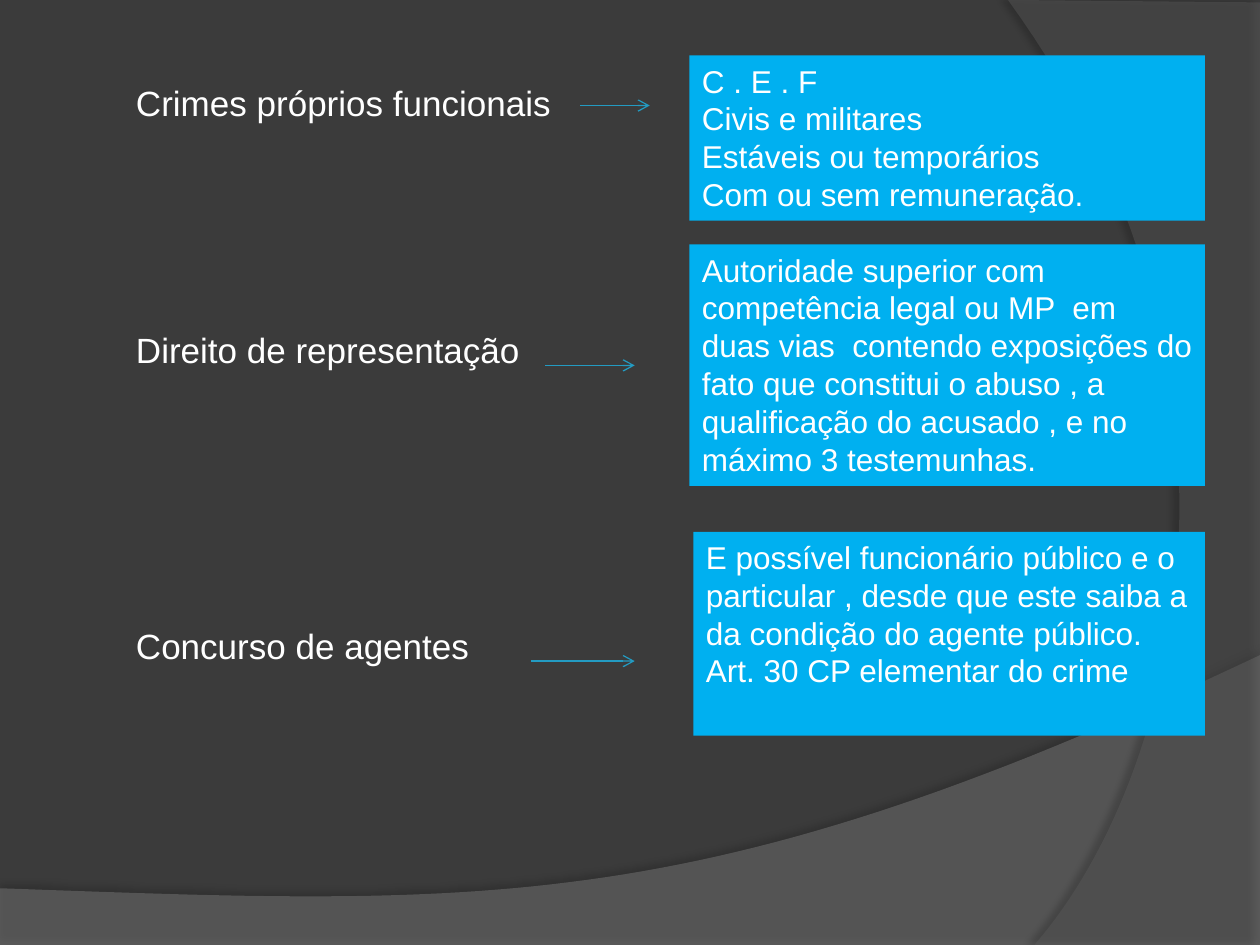
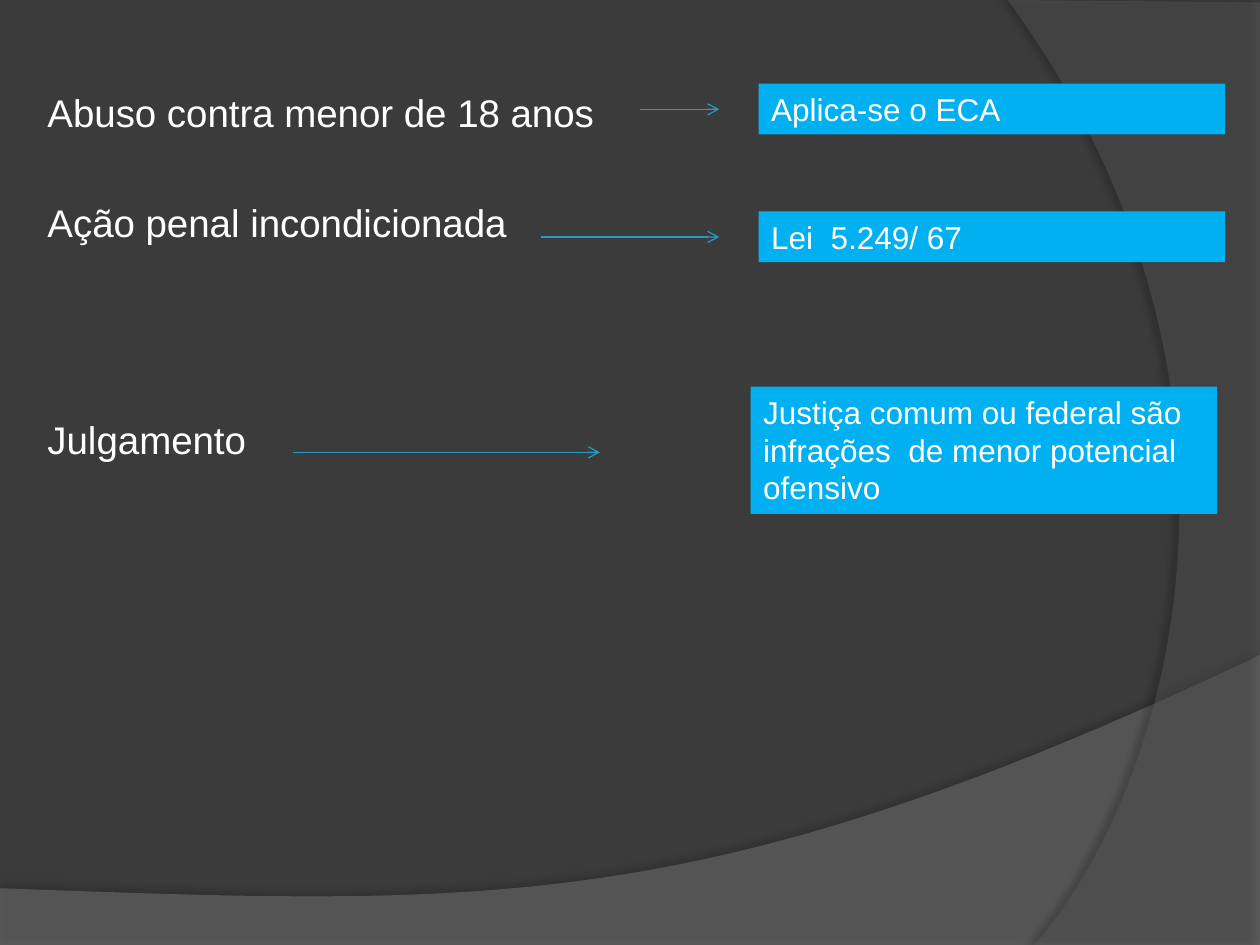
from lxml import etree
from pptx import Presentation
from pptx.dml.color import RGBColor
from pptx.enum.shapes import MSO_CONNECTOR, MSO_SHAPE
from pptx.enum.text import MSO_ANCHOR, PP_ALIGN
from pptx.oxml.ns import qn
from pptx.util import Pt

RECTANGLE = MSO_SHAPE.RECTANGLE
STRAIGHT = MSO_CONNECTOR.STRAIGHT
TOP = MSO_ANCHOR.TOP
LEFT = PP_ALIGN.LEFT

WIDTH, HEIGHT = 720, 540
FONT = "Arial"
COLORS = {
    "background": "3B3B3B",
    "wave": "7F7F7F",
    "arc": "5E5E5E",
    "answer": "00B0F0",
    "arrow": "239BC2",
    "text": "FFFFFF",
    "shadow": "000000",
}
LINE_PITCH = 1.4
LINE_HEIGHT = 1.15
CURVE_STEPS = 60


def color(name):
    return RGBColor.from_string(COLORS[name])


def curve(start, control_1, control_2, end):
    points = []
    for step in range(CURVE_STEPS + 1):
        t = step / CURVE_STEPS
        weights = ((1 - t) ** 3, 3 * t * (1 - t) ** 2, 3 * t * t * (1 - t), t ** 3)
        corners = (start, control_1, control_2, end)
        points.append(tuple(
            sum(weight * corner[axis] for weight, corner in zip(weights, corners))
            for axis in (0, 1)
        ))
    return points


WAVE = [(0, HEIGHT), (WIDTH, HEIGHT)] + curve(
    (WIDTH, 374.4), (402.5, 524.9), (281.5, 517.7), (0, 507.6))
ARC = [(WIDTH, 1.4), (WIDTH, HEIGHT)] + curve(
    (591.1, HEIGHT), (673.2, 445.7), (733, 216), (576, 0))


class SlideBuilder:
    def __init__(self):
        self.deck = Presentation()
        self.deck.slide_width = Pt(WIDTH)
        self.deck.slide_height = Pt(HEIGHT)
        self.page = None

    def start_page(self):
        self.page = self.deck.slides.add_slide(self.deck.slide_layouts[6])
        fill = self.page.background.fill
        fill.solid()
        fill.fore_color.rgb = color("background")
        self.band(WAVE, "wave", 45, 35, 3.5, 270)
        self.band(ARC, "arc", 40, 45, 4, 180)

    def band(self, points, fill_name, opacity, shadow_opacity, distance, angle):
        outline = [(Pt(x), Pt(y)) for x, y in points]
        builder = self.page.shapes.build_freeform(*outline[0], scale=1.0)
        builder.add_line_segments(outline[1:], close=True)
        shape = builder.convert_to_shape()
        shape.shadow.inherit = False
        shape.fill.solid()
        shape.fill.fore_color.rgb = color(fill_name)
        shape.line.fill.background()
        properties = shape._element.spPr
        self.add_alpha(properties.find(qn("a:solidFill"))[0], opacity)
        shadow = etree.SubElement(
            properties.find(qn("a:effectLst")), qn("a:outerShdw"),
            blurRad=str(Pt(4)), dist=str(Pt(distance)),
            dir=str(angle * 60000), algn="ctr", rotWithShape="0")
        shade = etree.SubElement(shadow, qn("a:srgbClr"), val=COLORS["shadow"])
        self.add_alpha(shade, shadow_opacity)

    def add_alpha(self, element, percent):
        etree.SubElement(element, qn("a:alpha"), val=str(percent * 1000))

    def set_text(self, frame, lines, size):
        frame.word_wrap = True
        frame.vertical_anchor = TOP
        frame.text = "\n".join(lines)
        for para in frame.paragraphs:
            para.alignment = LEFT
            for span in para.runs:
                span.font.name = FONT
                span.font.size = Pt(size)
                span.font.color.rgb = color("text")

    def topics(self, left, top, width, height, size, lines, steps):
        box = self.page.shapes.add_textbox(Pt(left), Pt(top), Pt(width), Pt(height))
        self.set_text(box.text_frame, lines, size)
        for para, step in zip(box.text_frame.paragraphs[1:], steps):
            para.space_before = Pt(round((step * LINE_PITCH - LINE_HEIGHT) * size, 1))

    def answer(self, left, top, width, height, *lines):
        box = self.page.shapes.add_shape(
            RECTANGLE, Pt(left), Pt(top), Pt(width), Pt(height))
        box.shadow.inherit = False
        box.fill.solid()
        box.fill.fore_color.rgb = color("answer")
        box.line.fill.background()
        self.set_text(box.text_frame, lines, 18)

    def arrow(self, start, end, y):
        arrow = self.page.shapes.add_connector(
            STRAIGHT, Pt(start), Pt(y), Pt(end), Pt(y))
        arrow.line.color.rgb = color("arrow")
        arrow.line.width = Pt(0.75)
        properties = arrow._element.spPr
        etree.SubElement(properties.find(qn("a:ln")), qn("a:tailEnd"), type="arrow")
        etree.SubElement(properties, qn("a:effectLst"))


def build_official_crimes(slides):
    slides.start_page()
    slides.topics(70.6, 43.2, 583, 425.5, 20, [
        "Crimes próprios funcionais",
        "Direito de representação",
        "Concurso de agentes",
    ], steps=(5, 6))
    slides.answer(394, 31.7, 294.6, 94.5,
                  "C . E . F",
                  "Civis e militares",
                  "Estáveis ou temporários",
                  "Com ou sem remuneração.")
    slides.answer(394, 139.7, 294.6, 138,
                  "Autoridade superior com competência legal ou MP  em duas vias  "
                  "contendo exposições do fato que constitui o abuso , a qualificação "
                  "do acusado , e no máximo 3 testemunhas.")
    slides.answer(396.3, 303.9, 292.3, 116.5,
                  "E possível funcionário público e o particular , desde que este "
                  "saiba a da condição do agente público. Art. 30 CP elementar do crime")
    slides.arrow(331.6, 371.3, 60.3)
    slides.arrow(311.5, 362.7, 208.8)
    slides.arrow(303.4, 362.7, 377.8)


def build_procedure(slides):
    slides.start_page()
    slides.topics(20, 47.5, 583, 271.5, 22, [
        "Abuso contra menor de 18 anos",
        "Ação penal incondicionada",
        "Julgamento",
    ], steps=(2, 4))
    slides.answer(433.6, 47.8, 266.5, 29, "Aplica-se o ECA")
    slides.answer(433.6, 120.8, 266.5, 29, "Lei  5.249/ 67")
    slides.answer(429, 220.9, 266.5, 72.7,
                  "Justiça comum ou federal são infrações  de menor potencial ofensivo")
    slides.arrow(365.7, 411, 62.5)
    slides.arrow(309, 411, 135.4)
    slides.arrow(167.3, 342.8, 258.5)


def main():
    slides = SlideBuilder()
    build_official_crimes(slides)
    build_procedure(slides)
    slides.deck.save("out.pptx")


if __name__ == "__main__":
    main()
